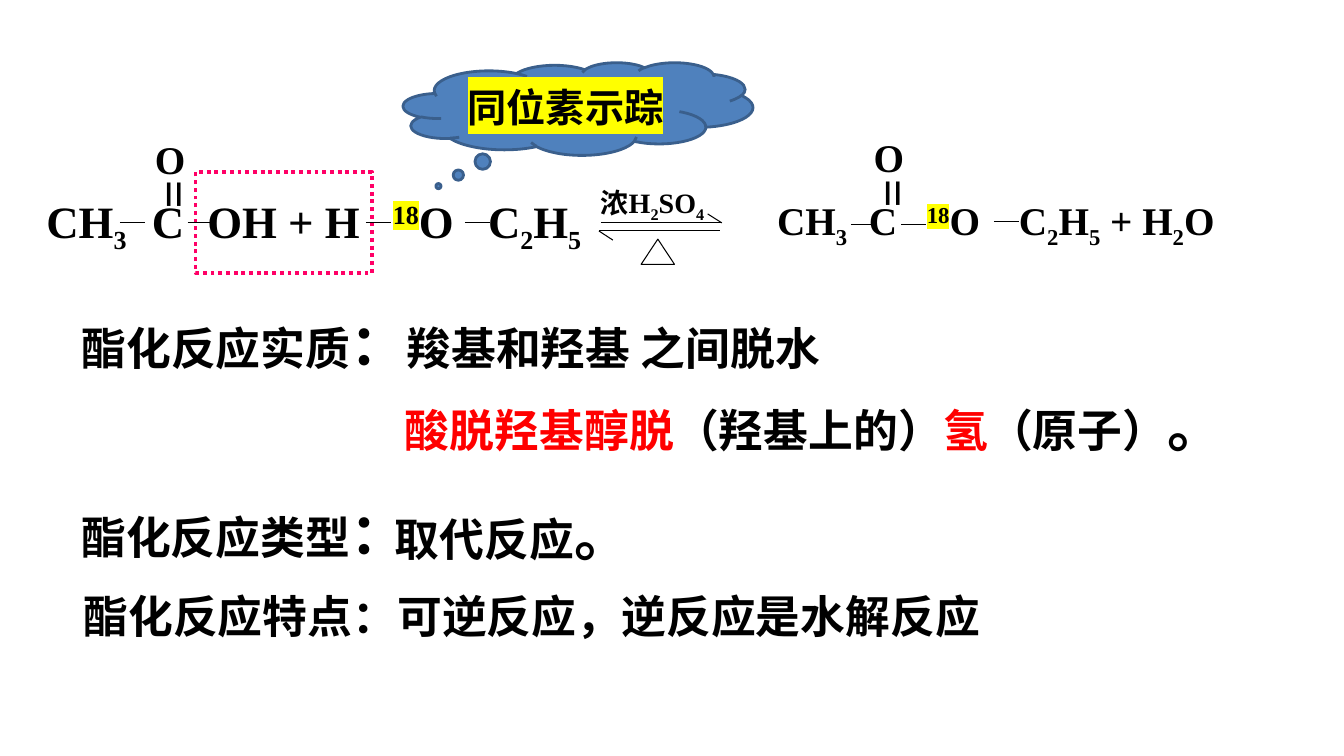
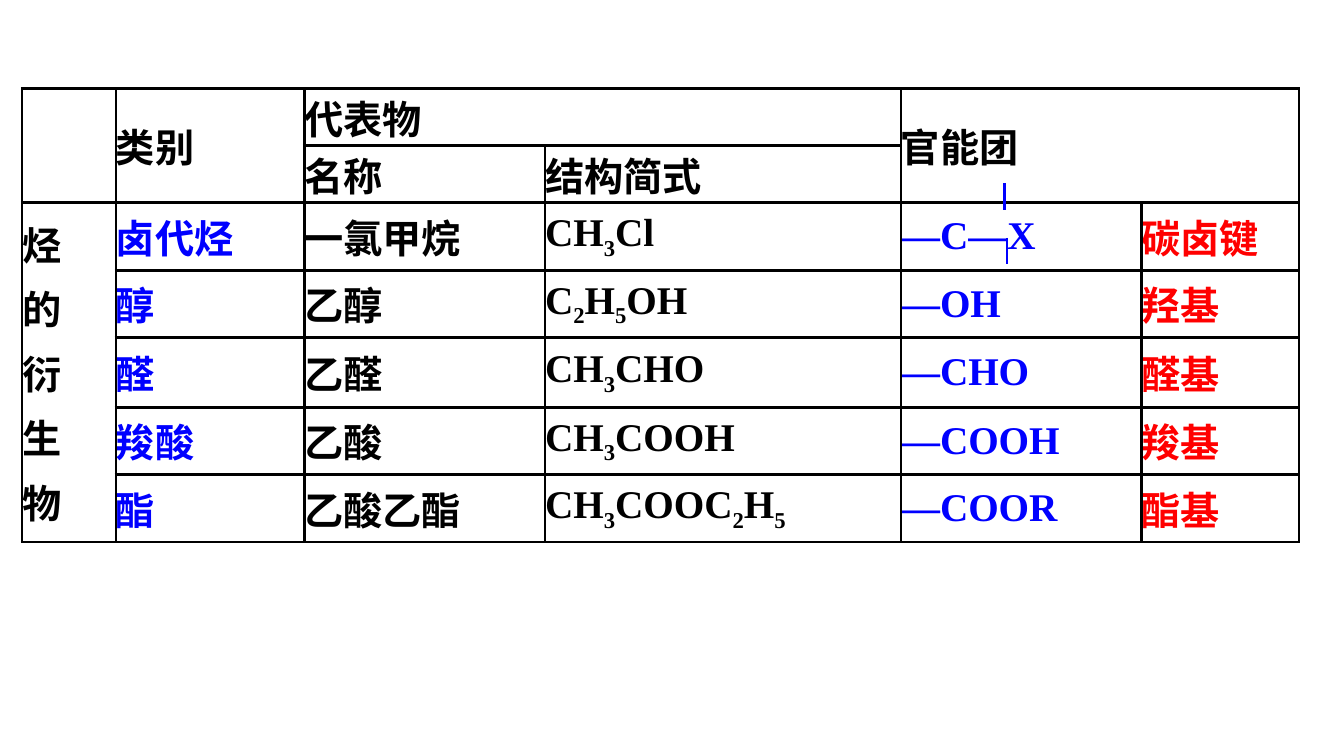
from itertools import groupby
from pptx import Presentation
from pptx.dml.color import RGBColor
from pptx.enum.dml import MSO_LINE
from pptx.enum.shapes import MSO_CONNECTOR as Link, MSO_SHAPE as Form
from pptx.enum.text import MSO_ANCHOR as Anchor, MSO_AUTO_SIZE as Fit, PP_ALIGN as Align
from pptx.oxml.ns import qn
from pptx.oxml.xmlchemy import OxmlElement as make
from pptx.util import Pt

BLACK = RGBColor(0, 0, 0)
WHITE = RGBColor(255, 255, 255)
RED = RGBColor(255, 0, 0)
BLUE = RGBColor(0, 0, 255)
PINK = RGBColor(255, 0, 102)
CLOUD = RGBColor(79, 129, 189)
EDGE = RGBColor(58, 95, 140)
GLOW = "FFFF00"
TIMES, ARIAL, CALI, NOTO = "Times New Roman", "Arial", "Calibri", "Noto Sans CJK SC"

HEADS = [(0, 1, 1, 1, "类别"), (0, 2, 0, 3, "代表物"), (0, 4, 1, 5, "官能团"),
         (1, 2, 1, 2, "名称"), (1, 3, 1, 3, "结构简式")]
ROWS = [
    ("卤代烃", "一氯甲烷", "CH3Cl", "—C—X", "碳卤键"),
    ("醇", "乙醇", "C2H5OH", "—OH", "羟基"),
    ("醛", "乙醛", "CH3CHO", "—CHO", "醛基"),
    ("羧酸", "乙酸", "CH3COOH", "—COOH", "羧基"),
    ("酯", "乙酸乙酯", "CH3COOC2H5", "—COOR", "酯基"),
]
STYLES = [(ARIAL, BLUE), (ARIAL, BLACK), (TIMES, BLACK), (TIMES, BLUE), (ARIAL, RED)]


def mark(props):
    glow = make("a:highlight")
    tint = make("a:srgbClr")
    tint.set("val", GLOW)
    glow.append(tint)
    props.find(qn("a:solidFill")).addnext(glow)


def put(par, text, size, font=TIMES, color=BLACK, lit=False):
    for digit, chars in groupby(text, str.isdigit):
        run = par.add_run()
        run.text = "".join(chars)
        face = run.font
        face.size, face.bold, face.name = Pt(size), True, font
        face.color.rgb = color
        props = run._r.get_or_add_rPr()
        east = make("a:ea")
        east.set("typeface", NOTO)
        props.find(qn("a:latin")).addnext(east)
        label = run.text == "18"
        if digit:
            props.set("baseline", "30000" if label else "-25000")
        if lit or label:
            mark(props)


def note(slide, x, y, w, h, *runs, font=TIMES):
    box = slide.shapes.add_textbox(Pt(x), Pt(y), Pt(w), Pt(h))
    box.text_frame.word_wrap = True
    for text, size, *color in runs:
        put(box.text_frame.paragraphs[0], text, size, font, *color)
    return box


def line(slide, x, y, end, foot, color=BLACK, width=0.75):
    bar = slide.shapes.add_connector(Link.STRAIGHT, Pt(x), Pt(y), Pt(end), Pt(foot))
    bar.line.color.rgb = color
    bar.line.width = Pt(width)
    bar._element.spPr.append(make("a:effectLst"))


def shape(slide, form, x, y, w, h, fill, edge, width):
    item = slide.shapes.add_shape(form, Pt(x), Pt(y), Pt(w), Pt(h))
    item.shadow.inherit = False
    if fill is None:
        item.fill.background()
    else:
        item.fill.solid()
        item.fill.fore_color.rgb = fill
    item.line.color.rgb = edge
    item.line.width = Pt(width)
    return item


def side(slide, x, y, w, drop, size, text, stops, bonds, oxo):
    box = note(slide, x, y + drop, w, 45, (text, size))
    tabs = make("a:tabLst")
    for stop in stops:
        tab = make("a:tab")
        tab.set("pos", str(Pt(stop)))
        tab.set("algn", "l")
        tabs.append(tab)
    box.text_frame.paragraphs[0]._p.get_or_add_pPr().append(tabs)
    pair = note(slide, x + oxo, y + 28.8, 58.3, 28, ("=", 36))
    pair._element.find(".//" + qn("a:bodyPr")).set("vert", "eaVert")
    note(slide, x + oxo + 10, y, 40, 41, ("O", 28))
    for left, top in bonds:
        line(slide, x + left, y + top, x + left + 18, y + top)


def arrow(slide, x, y):
    note(slide, x, y, 105, 31, ("浓H2SO4", 20))
    for left, top, end, foot in [(7.2, 30.2, 93.6, 30.2), (83.5, 23.8, 93.6, 30.2),
                                 (92.2, 36, 5.8, 36), (15.8, 42.5, 5.8, 36)]:
        line(slide, x + left, y + top, x + end, y + foot)
    shape(slide, Form.ISOSCELES_TRIANGLE, x + 36, y + 41.8, 23.8, 18, WHITE, BLACK, 0.75)


def cloud(slide, x, y, w, h):
    puff = shape(slide, Form.CLOUD_CALLOUT, x, y, w, h, CLOUD, EDGE, 2)
    puff.adjustments[0], puff.adjustments[1] = -0.399, 0.835
    puff.text_frame.vertical_anchor = Anchor.MIDDLE
    par = puff.text_frame.paragraphs[0]
    par.alignment = Align.CENTER
    put(par, "同位素示踪", 28, NOTO, lit=True)


def title(slide, x, y, w, h):
    head = slide.shapes.title
    head.left, head.top, head.width, head.height = Pt(x), Pt(y), Pt(w), Pt(h)
    frame = head.text_frame
    frame.auto_size = Fit.NONE
    frame.vertical_anchor = Anchor.MIDDLE
    par = frame.paragraphs[0]
    par.alignment = Align.LEFT
    for text, size in [("酯化反应实质", 32), ("：", 40), ("羧基和羟基 之间脱水", 32)]:
        put(par, text, size, CALI)


def ester(deck):
    slide = deck.slides.add_slide(deck.slide_layouts[5])
    title(slide, 51, 211.7, 900, 66.2)
    note(slide, 282.2, 275.8, 640, 55, ("酸脱羟基醇脱", 32, RED), ("（羟基上的）", 32),
         ("氢", 32, RED), ("（原子）", 32), ("。", 40))
    frame = shape(slide, Form.RECTANGLE, 139.7, 123, 126, 72, None, PINK, 2.75)
    frame.line.dash_style = MSO_LINE.ROUND_DOT
    side(slide, 26, 93, 516, 41.6, 32, "CH3\tC\tOH + H\t18O\tC2H5",
         (75.5, 115, 247.6, 315.5),
         [(left, 66) for left in (59.7, 108, 235.4, 306)], 67.6)
    arrow(slide, 422, 129)
    side(slide, 548, 92, 354, 44.8, 28, "CH3\tC\t18O\tC2H5 + H2O",
         (65.5, 107, 172.8), [(59.7, 68.6), (95.7, 68.6), (161.9, 66.4)], 59)
    kind = note(slide, 12.2, 347, 324, 66.2, ("酯化反应类型", 32), ("：", 40))
    kind.text_frame.vertical_anchor = Anchor.MIDDLE
    kind.text_frame.paragraphs[0].alignment = Align.CENTER
    note(slide, 275, 354.2, 200, 55, ("取代反应", 32), ("。", 40))
    cloud(slide, 288, 44.6, 249.8, 66.2)
    note(slide, 52.6, 416.9, 680, 46, ("酯化反应特点：可逆反应，逆反应是水解反应", 32), font=NOTO)


def rim(cell):
    props = cell._tc.get_or_add_tcPr()
    for index, tag in enumerate(("a:lnL", "a:lnR", "a:lnT", "a:lnB")):
        edge = make(tag)
        edge.set("w", str(Pt(2.25)))
        fill = make("a:solidFill")
        tint = make("a:srgbClr")
        tint.set("val", str(BLACK))
        fill.append(tint)
        edge.append(fill)
        props.insert(index, edge)


def fill(cell, text, font=ARIAL, color=BLACK):
    for index, part in enumerate(text.split("\n")):
        frame = cell.text_frame
        par = frame.add_paragraph() if index else frame.paragraphs[0]
        if index:
            par.space_before = Pt(5.6)
        put(par, part, 28, font, color)


def grid(slide, x, y, wide, high):
    table = slide.shapes.add_table(len(high), len(wide), Pt(x), Pt(y),
                                   Pt(sum(wide)), Pt(sum(high))).table
    table.first_row = table.horz_banding = False
    for col, width in zip(table.columns, wide):
        col.width = Pt(width)
    for row, height in zip(table.rows, high):
        row.height = Pt(height)
    for cell in table.iter_cells():
        cell.fill.background()
        cell.vertical_anchor = Anchor.MIDDLE
        cell.margin_left = cell.margin_right = cell.margin_top = cell.margin_bottom = 0
        rim(cell)
    sides = [(0, 0, 1, 0, ""), (2, 0, 6, 0, "\n".join("烃的衍生物"))]
    for top, left, foot, end, text in HEADS + sides:
        cell = table.cell(top, left)
        if (top, left) != (foot, end):
            cell.merge(table.cell(foot, end))
        if text:
            fill(cell, text)
    for r, row in enumerate(ROWS, 2):
        for c, (text, style) in enumerate(zip(row, STYLES), 1):
            fill(table.cell(r, c), text, *style)


def groups(deck):
    slide = deck.slides.add_slide(deck.slide_layouts[6])
    grid(slide, 15.8, 63.4, (67, 134.6, 172, 254.2, 172, 112.3),
         (40.7, 40.7, 48.2, 48.2, 49.7, 48.2, 48.2))
    for x, y in [(717.8, 131), (719.3, 170)]:
        line(slide, x, y, x, y + 18.7, BLUE, 2)


def main():
    deck = Presentation()
    deck.slide_width, deck.slide_height = Pt(960), Pt(540)
    ester(deck)
    groups(deck)
    deck.save("out.pptx")


if __name__ == "__main__":
    main()
